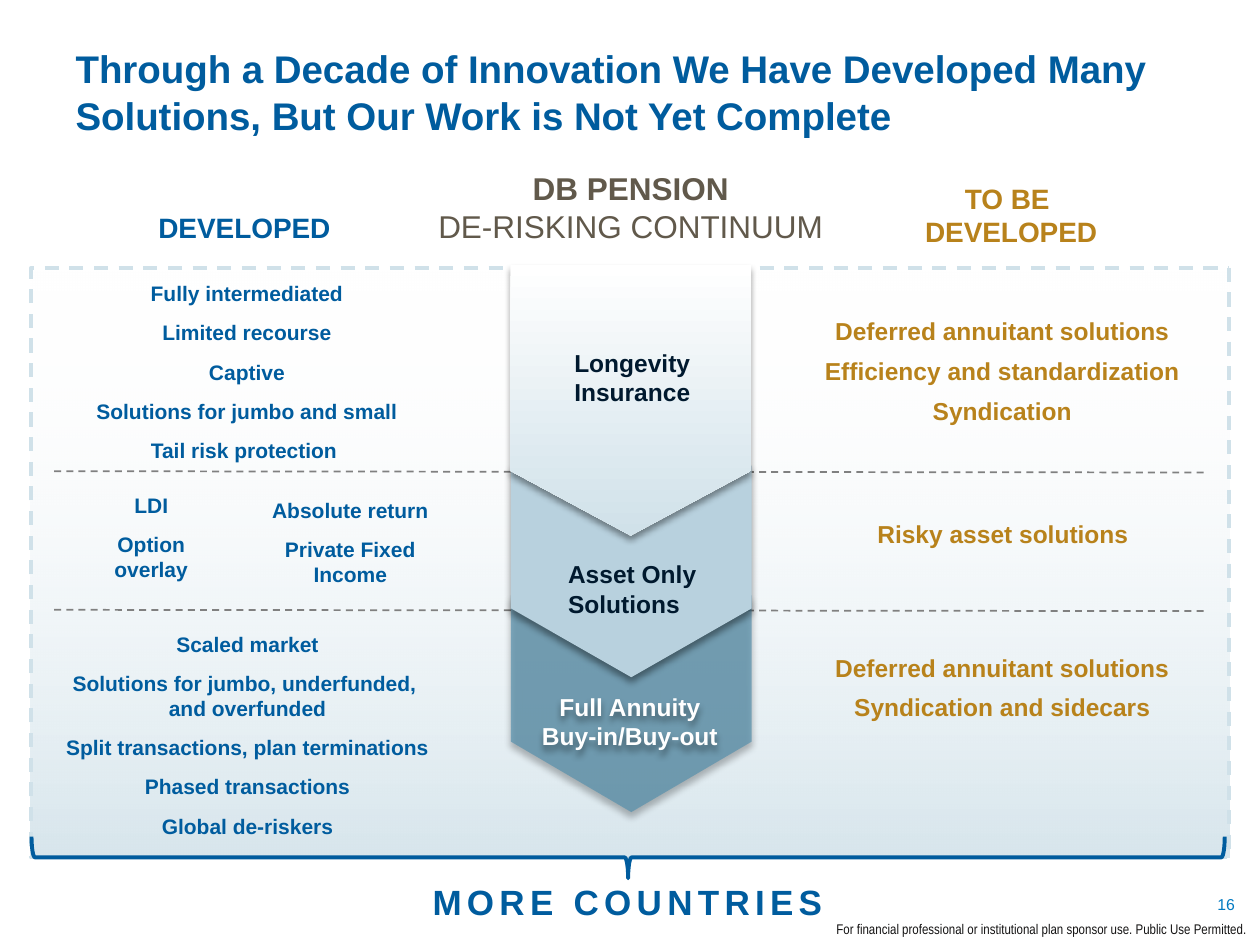
from dataclasses import dataclass

from lxml import etree
from pptx import Presentation
from pptx import util as u
from pptx.dml.color import RGBColor
from pptx.enum import dml, shapes, text
from pptx.oxml.ns import qn

LEFT, CENTER, RIGHT = text.PP_ALIGN.LEFT, text.PP_ALIGN.CENTER, text.PP_ALIGN.RIGHT


@dataclass(frozen=True)
class Theme:
    """Colours, fonts and type sizes of the slide."""
    blue: str = "005C9E"
    gold: str = "B8821B"
    taupe: str = "61594B"
    navy: str = "00192E"
    white: str = "FFFFFF"
    ice: str = "D0E1E9"
    mist: str = "B8D1DE"
    steel: str = "508EAC"
    grey: str = "808080"
    number: str = "007AC2"
    ink: str = "141313"
    font: str = "Arial"
    narrow: str = "Arial Narrow"
    title: float = 22
    banner: float = 20
    center_heading: float = 18
    heading: float = 16
    label: float = 14
    item: float = 12
    page_number: float = 9
    note: float = 8


class Slide:
    """Holds the theme and the current slide and draws its elements."""

    def __init__(self, deck, theme):
        self.theme = theme
        self.page = deck.slides.add_slide(deck.slide_layouts[5])

    def place(self, box, bounds):
        box.left, box.top, box.width, box.height = map(u.Inches, bounds)

    def fill_text(self, box, lines, size, color, align=CENTER, before=0, hang=0,
                  bold=True, font=None, anchor=text.MSO_ANCHOR.TOP, wrap=True):
        frame = box.text_frame
        frame.word_wrap = wrap
        frame.auto_size = text.MSO_AUTO_SIZE.NONE
        frame.vertical_anchor = anchor
        frame.text = "\n".join(lines)
        for para in frame.paragraphs:
            para.alignment = align
            para.space_before = u.Pt(before)
            para.font.name = font or self.theme.font
            para.font.size = u.Pt(size)
            para.font.bold = bold
            para.font.color.rgb = RGBColor.from_string(color)
            if hang:
                properties = para._p.get_or_add_pPr()
                properties.set("marL", str(u.Inches(hang)))
                properties.set("indent", str(-u.Inches(hang)))
        return box

    def title(self, words, bounds):
        box = self.page.shapes.title
        self.place(box, bounds)
        self.fill_text(box, [words], self.theme.title, self.theme.blue, LEFT)

    def text(self, bounds, lines, size, color, **style):
        box = self.page.shapes.add_textbox(*map(u.Inches, bounds))
        return self.fill_text(box, lines, size, color, **style)

    def shape(self, kind, bounds, rotation=0, point=None):
        box = self.page.shapes.add_shape(kind, *map(u.Inches, bounds))
        box.rotation = rotation
        box.shadow.inherit = False
        box.fill.background()
        box.line.fill.background()
        if point is not None:
            box.adjustments[0] = point
        return box

    def heading(self, bounds, lines, size, color, point=None):
        box = self.shape(shapes.MSO_SHAPE.PENTAGON, bounds, point=point)
        return self.fill_text(box, lines, size, color, anchor=text.MSO_ANCHOR.MIDDLE)

    def paint(self, box, colors, alphas=()):
        if len(colors) == 1:
            box.fill.solid()
            box.fill.fore_color.rgb = RGBColor.from_string(colors[0])
        else:
            box.fill.gradient()
            box.fill.gradient_angle = 0
            for stop, color in zip(box.fill.gradient_stops, colors):
                stop.color.rgb = RGBColor.from_string(color)
        for node, alpha in zip(box.element.spPr.iter(qn("a:srgbClr")), alphas):
            etree.SubElement(node, qn("a:alpha"), val=str(alpha * 1000))

    def outline(self, box, color, width, dashed=False):
        box.line.color.rgb = RGBColor.from_string(color)
        box.line.width = u.Pt(width)
        if dashed:
            box.line.dash_style = dml.MSO_LINE.DASH

    def cast_shadow(self, box):
        box.shadow.inherit = False
        effects = box.element.spPr.find(qn("a:effectLst"))
        shadow = etree.SubElement(
            effects, qn("a:outerShdw"), blurRad=str(u.Pt(4)), dist=str(u.Pt(3)),
            dir="5400000", algn="t", rotWithShape="0")
        color = etree.SubElement(shadow, qn("a:srgbClr"), val="000000")
        etree.SubElement(color, qn("a:alpha"), val="40000")

    def chevron(self, bounds, point, colors, alphas=()):
        box = self.shape(shapes.MSO_SHAPE.PENTAGON, bounds, 90, point)
        self.paint(box, colors, alphas)
        self.cast_shadow(box)

    def divider(self, top):
        ends = map(u.Inches, (0.43, top, 9.58, top + 0.01))
        line = self.page.shapes.add_connector(shapes.MSO_CONNECTOR.STRAIGHT, *ends)
        self.outline(line, self.theme.grey, 1, dashed=True)
        etree.SubElement(line.element.spPr, qn("a:effectLst"))


def main():
    theme = Theme()
    deck = Presentation()
    deck.slide_width, deck.slide_height = u.Inches(10), u.Inches(7.5)
    slide = Slide(deck, theme)
    slide.title("Through a Decade of Innovation We Have Developed Many "
                "Solutions, But Our Work is Not Yet Complete", (0.5, 0.31, 9, 1.25))
    slide.text((9.33, 7.05, 0.57, 0.25), ["16"], theme.page_number, theme.number,
               align=RIGHT, bold=False, anchor=text.MSO_ANCHOR.MIDDLE)
    slide.text((4.64, 7.26, 5.36, 0.24),
               ["For financial professional or institutional plan sponsor use. "
                "Public Use Permitted."], theme.note, theme.ink,
               align=RIGHT, bold=False, font=theme.narrow)

    panel = slide.shape(shapes.MSO_SHAPE.PENTAGON, (2.66, -0.29, 4.68, 9.51), 90, 0)
    slide.paint(panel, (theme.white, theme.ice), (0, 83))
    slide.outline(panel, theme.ice, 2, dashed=True)
    for top in (3.74, 4.84):
        slide.divider(top)

    slide.chevron((4.15, 4.63, 1.72, 1.91), 0.325, [theme.steel], [65])
    slide.chevron((4.17, 3.58, 1.68, 1.91), 0.325, [theme.mist])
    slide.chevron((3.93, 2.22, 2.15, 1.91), 0.269, [theme.white, theme.ice])
    for bounds, lines in (((4.41, 4.39, 1.22, 0.57), ["Asset Only", "Solutions"]),
                          ((4.46, 2.71, 1.13, 0.57), ["Longevity", "Insurance"])):
        slide.text(bounds, lines, theme.label, theme.navy, align=LEFT, wrap=False)
    annuity = slide.text((4.2, 5.44, 1.6, 0.57), ["Full Annuity", "Buy-in/Buy-out"],
                         theme.label, theme.white, wrap=False)
    slide.cast_shadow(annuity)

    continuum = slide.heading((0.74, 1.31, 8.7, 0.67),
                              ["DB PENSION", "DE-RISKING CONTINUUM"],
                              theme.center_heading, theme.taupe)
    continuum.text_frame.paragraphs[1].font.bold = False
    slide.heading((0.97, 1.47, 1.94, 0.67), ["DEVELOPED"], theme.heading, theme.blue, 0)
    slide.heading((6.78, 1.37, 2.49, 0.67), ["TO BE \vDEVELOPED"],
                  theme.heading, theme.gold, 0)

    developed = (
        ((0.16, 2.18, 3.6, 1.56), 0.1,
         ["Fully intermediated", "Limited recourse", "Captive",
          "Solutions for jumbo and small", "Tail risk protection "]),
        ((0.29, 3.86, 1.82, 0.82), 0, ["LDI", "Option\voverlay"]),
        ((1.87, 3.9, 1.82, 0.82), 0, ["Absolute return", "Private Fixed Income"]),
        ((0.36, 4.96, 3.21, 1.76), 0,
         ["Scaled market", "Solutions for jumbo, underfunded, \vand overfunded",
          "Split transactions, plan terminations", "Phased transactions",
          "Global de-riskers"]))
    for bounds, hang, lines in developed:
        slide.text(bounds, lines, theme.item, theme.blue, before=8, hang=hang)

    upcoming = (
        ((6.35, 2.46, 3.21, 0.98), 0,
         ["Deferred annuitant solutions", "Efficiency and standardization", "Syndication"]),
        ((6.69, 4.07, 2.54, 0.34), 0.2, ["Risky asset solutions"]),
        ((6.42, 5.13, 3.07, 0.66), 0.2,
         ["Deferred annuitant solutions", "Syndication and sidecars"]))
    for bounds, hang, lines in upcoming:
        slide.text(bounds, lines, theme.label, theme.gold, before=6, hang=hang)

    banner = slide.text((3.3, 6.94, 3.36, 0.48), ["MORE COUNTRIES"],
                        theme.banner, theme.blue)
    for span in banner.text_frame.paragraphs[0].runs:
        span.font._element.set("spc", "300")
    brace = slide.shape(shapes.MSO_SHAPE.RIGHT_BRACE, (4.82, 2.07, 0.33, 9.47), 90)
    slide.outline(brace, theme.blue, 2.25)
    deck.save("out.pptx")


if __name__ == "__main__":
    main()
